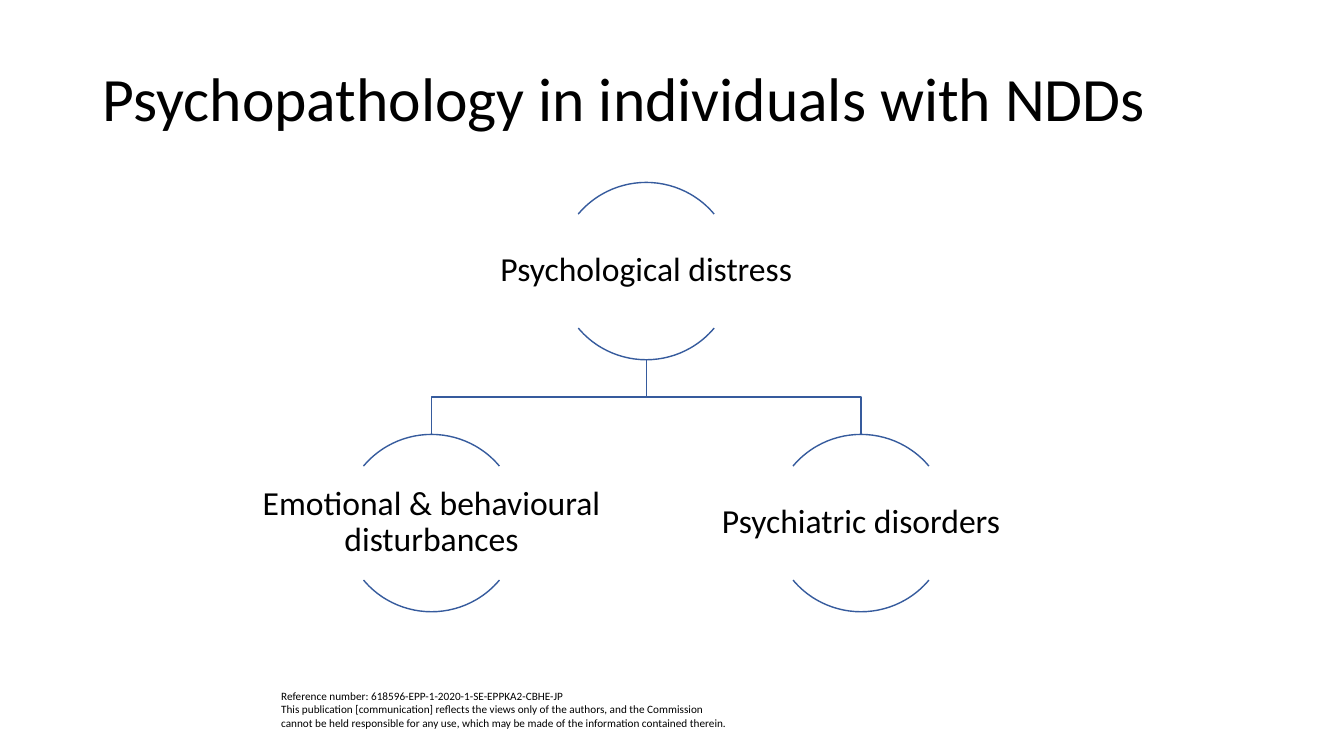
from pptx import Presentation
from pptx import util as u
from pptx.dml.color import RGBColor
from pptx.enum import shapes, text

PX = 9144  # EMU per px, 100 px to the inch
COLORS = {"line": "365B9D", "text": "000000"}
DIAMETER = 176
LABEL_W, LABEL_H = 352, 113
ROOT_X, ROOT_Y, CHILD_Y = 641, 181, 431
SPREAD = 213
NODES = [
    ("Psychological distress", ROOT_X, ROOT_Y),
    ("Emotional & behavioural disturbances", ROOT_X - SPREAD, CHILD_Y),
    ("Psychiatric disorders", ROOT_X + SPREAD, CHILD_Y),
]
ARC_ANGLES = [(220, 320), (40, 140)]  # top and bottom of each circle


def add_text(content, left, top, width, height, size, anchor):
    tb = slide.shapes.add_textbox(left * PX, top * PX, width * PX, height * PX)
    tf = tb.text_frame
    tf.word_wrap = True
    tf.vertical_anchor = anchor
    tf.text = content
    for r in tf.paragraphs[0].runs:
        r.font.name = "Calibri"
        r.font.size = u.Pt(size)
        r.font.color.rgb = RGBColor.from_string(COLORS["text"])
    return tf


def outline(sp):
    """Leave a shape with only a thin blue line."""
    sp.shadow.inherit = False
    sp.fill.background()
    sp.line.color.rgb = RGBColor.from_string(COLORS["line"])
    sp.line.width = u.Pt(1)


prs = Presentation()
prs.slide_width = u.Inches(13.33)
prs.slide_height = u.Inches(7.5)
slide = prs.slides.add_slide(prs.slide_layouts[6])

add_text(
    "Reference number: 618596-EPP-1-2020-1-SE-EPPKA2-CBHE-JP\v"
    "This publication [communication] reflects the views only of the authors, "
    "and the Commission cannot be held responsible for any use, which may be "
    "made of the information contained therein.",
    269, 679, 464, 50, 8, text.MSO_ANCHOR.TOP)

title = add_text("Psychopathology in individuals with NDDs",
                 92, 53, 1150, 96, 44, text.MSO_ANCHOR.MIDDLE)
title.paragraphs[0].line_spacing = 0.9

# Elbow lines from the root circle to each child
root_bottom = ROOT_Y + DIAMETER
middle = (root_bottom + CHILD_Y) // 2
for child_x in (ROOT_X + SPREAD, ROOT_X - SPREAD):
    elbow = slide.shapes.build_freeform(ROOT_X, root_bottom, scale=PX)
    elbow.add_line_segments(
        [(ROOT_X, middle), (child_x, middle), (child_x, CHILD_Y)], close=False)
    outline(elbow.convert_to_shape())

for label, center_x, top in NODES:
    for start, end in ARC_ANGLES:
        arc = slide.shapes.add_shape(
            shapes.MSO_SHAPE.ARC, (center_x - DIAMETER // 2) * PX, top * PX,
            DIAMETER * PX, DIAMETER * PX)
        # Angles are stored in 60000ths of a degree, adjustments in 100000ths
        arc.adjustments[0] = start * 0.6
        arc.adjustments[1] = end * 0.6
        outline(arc)
    tf = add_text(label, center_x - LABEL_W // 2, top + (DIAMETER - LABEL_H) // 2,
                  LABEL_W, LABEL_H, 24, text.MSO_ANCHOR.MIDDLE)
    tf.margin_left = tf.margin_right = tf.margin_top = tf.margin_bottom = 2 * PX
    p = tf.paragraphs[0]
    p.alignment = text.PP_ALIGN.CENTER
    p.line_spacing = 0.9

prs.save("out.pptx")
